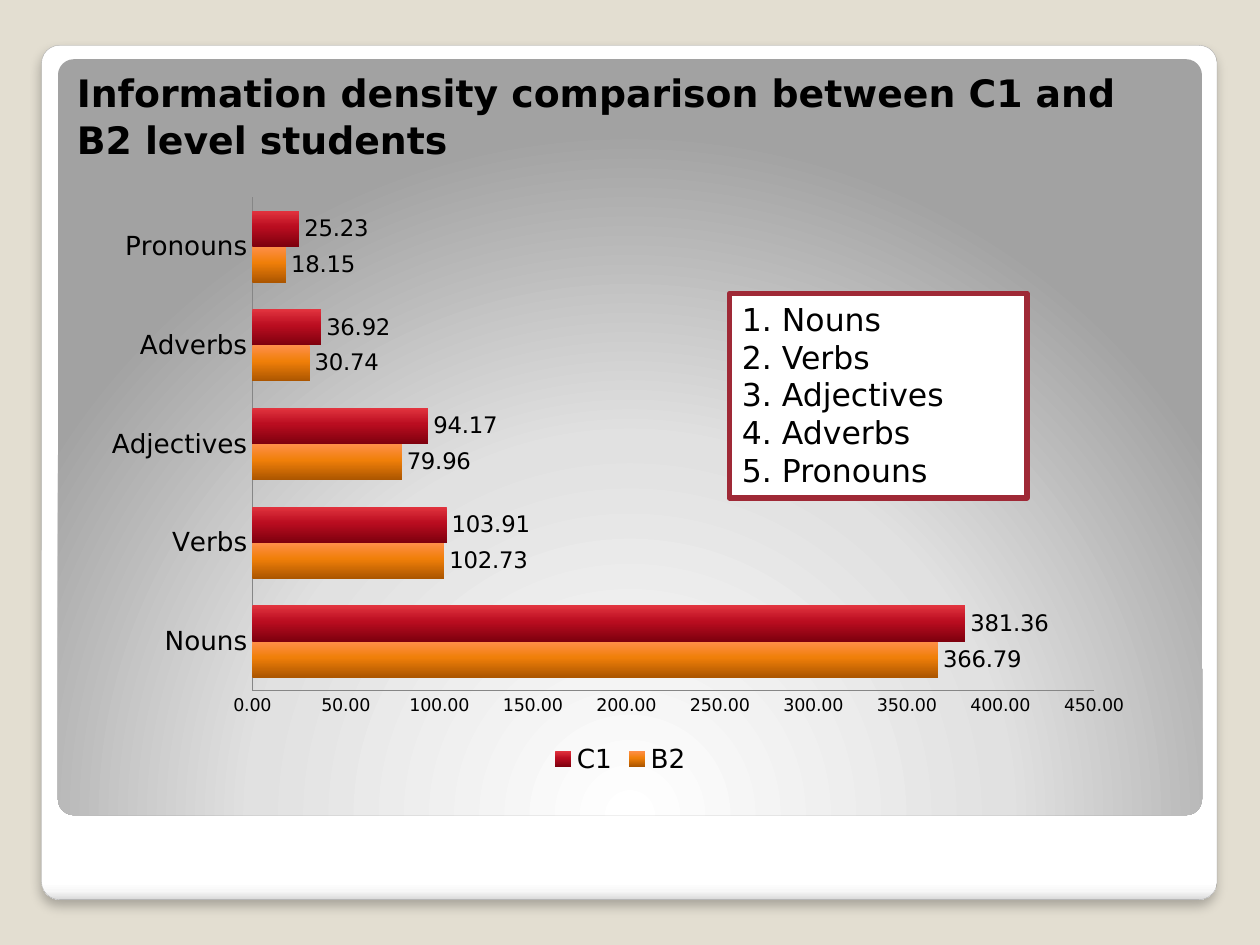
import pptx
import pptx.util
from dataclasses import dataclass
from lxml import etree
from pptx.chart.data import CategoryChartData
from pptx.dml.color import RGBColor
from pptx.enum.chart import (XL_CHART_TYPE, XL_LABEL_POSITION,
                             XL_LEGEND_POSITION, XL_TICK_MARK)
from pptx.enum.shapes import MSO_SHAPE
from pptx.enum.text import MSO_ANCHOR, MSO_AUTO_SIZE, PP_ALIGN
from pptx.oxml import parse_xml
from pptx.oxml.ns import nsdecls, qn
from pptx.util import Inches, Pt


@dataclass(frozen=True)
class Theme:
    font: str = "DejaVu Sans"
    text: str = "000000"
    background: str = "E3DED1"
    white: str = "FFFFFF"
    red: str = "9F2936"
    frame_line: str = "A4A4A4"
    axis_line: str = "868686"
    title_size: float = 21.6
    list_size: float = 18
    label_size: float = 13
    category_size: float = 15
    axis_size: float = 10


T = Theme()
DOWN = '<a:lin ang="5400000" scaled="0"/>'
GLOW = ('<a:path path="circle"><a:fillToRect l="50000" t="175000" '
        'r="50000" b="-75000"/></a:path>')
FRAME_STOPS = [(0, "FFFFFF"), (98, "FFFFFF"), (99, "F7F7F7"), (100, "DADADA")]
PANEL_STOPS = [(0, "FFFFFF"), (55, "E1E1E1"), (100, "A2A2A2")]

CATEGORIES = ["Nouns", "Verbs", "Adjectives", "Adverbs", "Pronouns"]
# Series name: values, bar gradient
SERIES = {
    "B2": ([366.79, 102.73, 79.96, 30.74, 18.15],
           [(0, "FF8F4A"), (45, "F07F09"), (100, "AC5600")]),
    "C1": ([381.36, 103.91, 94.17, 36.92, 25.23],
           [(0, "E2343F"), (45, "BA0D20"), (100, "7E000E")]),
}


def color(value):
    return RGBColor.from_string(value)


def style_font(font, size, bold=False):
    font.name = T.font
    font.size = Pt(size)
    font.bold = bold
    font.color.rgb = color(T.text)


def set_gradient(fill, stops, direction):
    """Replace the stops and direction of a gradient fill."""
    fill.gradient()
    grad = fill._fill._gradFill
    for child in list(grad):
        grad.remove(child)
    stop_xml = "".join(f'<a:gs pos="{pos * 1000}"><a:srgbClr val="{rgb}"/></a:gs>'
                       for pos, rgb in stops)
    new = parse_xml(f'<a:gradFill {nsdecls("a")}><a:gsLst>{stop_xml}</a:gsLst>'
                    f'{direction}</a:gradFill>')
    grad.extend(list(new))


def add_panel(s, left, top, width, height, stops, direction):
    sp = s.shapes.add_shape(MSO_SHAPE.ROUNDED_RECTANGLE, Inches(left),
                            Inches(top), Inches(width), Inches(height))
    sp.adjustments[0] = 0.021
    sp.shadow.inherit = False
    set_gradient(sp.fill, stops, direction)
    sp.line.fill.background()
    return sp


def add_frame(s):
    sp = add_panel(s, 0.33, 0.36, 9.33, 6.78, FRAME_STOPS, DOWN)
    sp.line.color.rgb = color(T.frame_line)
    sp.line.width = Pt(0.16)
    effects = sp._element.spPr.find(qn("a:effectLst"))
    effects.append(parse_xml(
        f'<a:outerShdw {nsdecls("a")} blurRad="{Pt(6)}" dist="{Pt(4)}" '
        'dir="5400000" rotWithShape="0"><a:srgbClr val="000000">'
        '<a:alpha val="25000"/></a:srgbClr></a:outerShdw>'))


def set_title(s, text):
    sp = s.shapes.title
    s.shapes._spTree.append(sp._element)  # in front of the panels
    sp.left, sp.top = Inches(0.51), Inches(0.52)
    sp.width, sp.height = Inches(8.95), Inches(0.79)
    tf = sp.text_frame
    tf.text = text
    tf.word_wrap = True
    tf.auto_size = MSO_AUTO_SIZE.NONE
    tf.vertical_anchor = MSO_ANCHOR.BOTTOM
    tf.margin_bottom = Inches(0.02)
    p = tf.paragraphs[0]
    p.alignment = PP_ALIGN.LEFT
    p.line_spacing = 1.04
    style_font(p.runs[0].font, T.title_size, bold=True)


def style_axis(axis, size):
    axis.has_major_gridlines = False
    axis.major_tick_mark = axis.minor_tick_mark = XL_TICK_MARK.NONE
    axis.format.line.color.rgb = color(T.axis_line)
    axis.format.line.width = Pt(0.75)
    style_font(axis.tick_labels.font, size)


def set_plot_area(chart, x, y, w, h):
    """Fix the inner plot area, as fractions of the chart."""
    area = chart._chartSpace.chart.plotArea
    for old in area.findall(qn("c:layout")):
        area.remove(old)
    layout = etree.Element(qn("c:layout"))
    manual = etree.SubElement(layout, qn("c:manualLayout"))
    for tag, value in [("layoutTarget", "inner"), ("xMode", "edge"),
                       ("yMode", "edge"), ("x", x), ("y", y), ("w", w), ("h", h)]:
        etree.SubElement(manual, qn(f"c:{tag}")).set("val", str(value))
    area.insert(0, layout)


def add_density_chart(s):
    data = CategoryChartData(number_format="0.00")
    data.categories = CATEGORIES
    for name, (values, _) in SERIES.items():
        data.add_series(name, values)
    chart = s.shapes.add_chart(XL_CHART_TYPE.BAR_CLUSTERED, Inches(0.75),
                               Inches(1.47), Inches(8.35), Inches(4.72),
                               data).chart
    style_font(chart.font, T.axis_size)
    chart.has_title = False
    set_plot_area(chart, 0.15, 0.02, 0.8, 0.83)

    # Axes and legend
    style_axis(chart.category_axis, T.category_size)
    style_axis(chart.value_axis, T.axis_size)
    chart.value_axis.minimum_scale = 0
    chart.value_axis.maximum_scale = 450
    chart.value_axis.major_unit = 50
    labels = chart.value_axis.tick_labels
    labels.number_format, labels.number_format_is_linked = "0.00", False
    chart.has_legend = True
    chart.legend.position = XL_LEGEND_POSITION.BOTTOM
    chart.legend.include_in_layout = False
    style_font(chart.legend.font, T.category_size)

    # Bars and their values
    plot = chart.plots[0]
    plot.gap_width = 75
    plot.overlap = 0
    plot.vary_by_categories = False
    for series in plot.series:
        set_gradient(series.format.fill, SERIES[series.name][1], DOWN)
        labels = series.data_labels
        labels.show_value = True
        labels.position = XL_LABEL_POSITION.OUTSIDE_END
        labels.number_format, labels.number_format_is_linked = "0.00", False
        style_font(labels.font, T.label_size)


def add_ranking(s):
    sp = s.shapes.add_shape(MSO_SHAPE.RECTANGLE, Inches(5.79), Inches(2.33),
                            Inches(2.36), Inches(1.62))
    sp.shadow.inherit = False
    sp.fill.solid()
    sp.fill.fore_color.rgb = color(T.white)
    sp.line.color.rgb = color(T.red)
    sp.line.width = Pt(3.35)
    tf = sp.text_frame
    tf.word_wrap = True
    tf.vertical_anchor = MSO_ANCHOR.TOP
    tf.text = "\n".join(f"{i}. {name}" for i, name in enumerate(CATEGORIES, 1))
    for p in tf.paragraphs:
        p.alignment = PP_ALIGN.LEFT
        style_font(p.runs[0].font, T.list_size)


def main():
    prs = pptx.Presentation()
    prs.slide_width, prs.slide_height = Inches(10), Inches(7.5)
    s = prs.slides.add_slide(prs.slide_layouts[5])
    s.background.fill.solid()
    s.background.fill.fore_color.rgb = color(T.background)
    add_frame(s)
    add_panel(s, 0.46, 0.47, 9.08, 6, PANEL_STOPS, GLOW)
    set_title(s, "Information density comparison between C1 and B2 level students")
    add_density_chart(s)
    add_ranking(s)
    prs.save("out.pptx")


if __name__ == "__main__":
    main()
